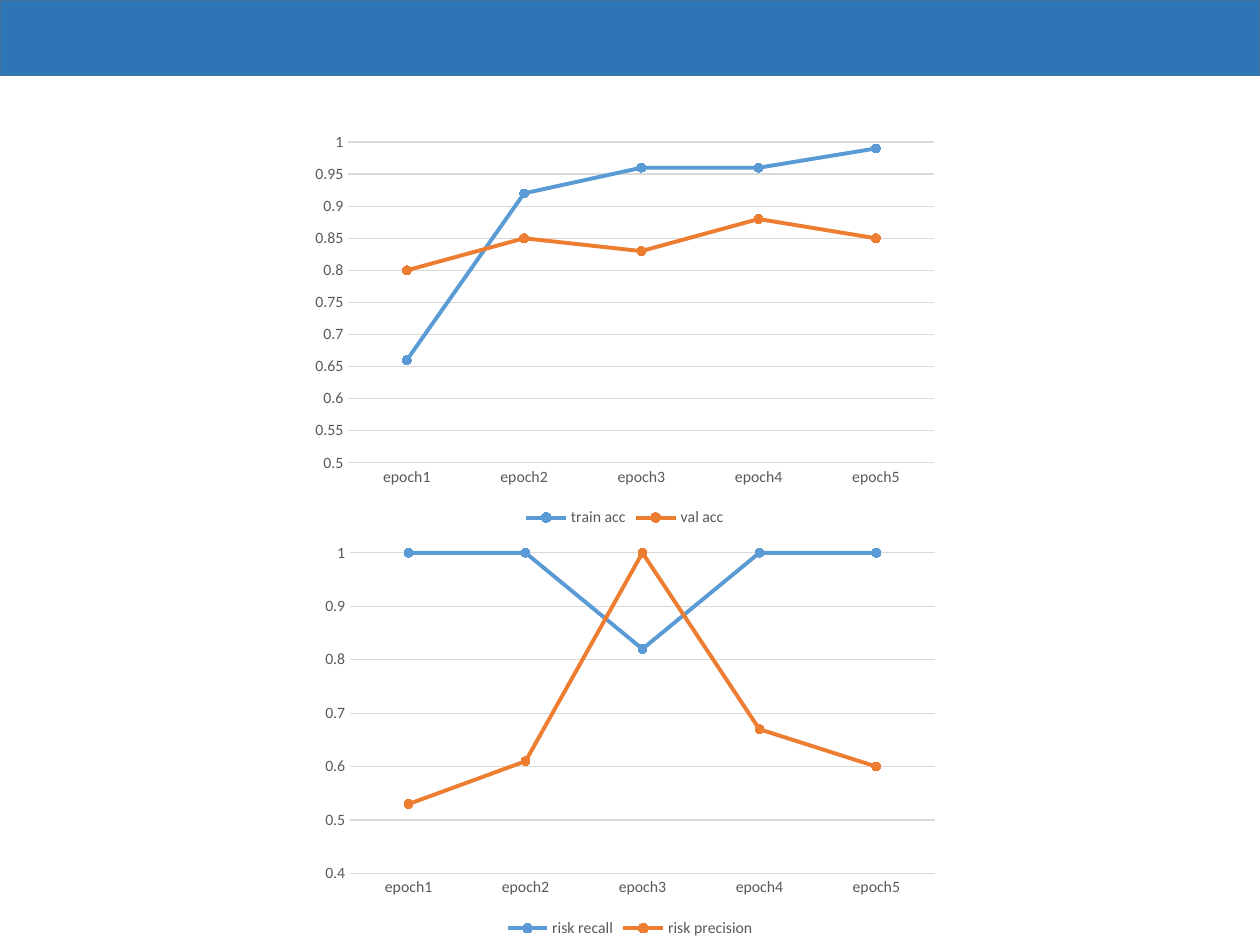
"""Build a slide with two line charts of training metrics per epoch."""
from pptx import Presentation
from pptx.chart.data import CategoryChartData
from pptx.dml.color import RGBColor
from pptx.enum.chart import XL_CHART_TYPE, XL_LEGEND_POSITION, XL_MARKER_STYLE, XL_TICK_MARK
from pptx.enum.shapes import MSO_SHAPE
from pptx.util import Pt

COLORS = {
    "banner": "2E75B6", "banner_line": "41719C", "grid": "D9D9D9",
    "label": "595959", "text": "000000", "first": "5B9BD5", "second": "ED7D31",
}
EPOCHS = ["epoch1", "epoch2", "epoch3", "epoch4", "epoch5"]
CHARTS = [
    {
        "left": 172.8, "top": 71.3, "min": 0.5, "step": 0.05,
        "series": [
            ("train acc", [0.66, 0.92, 0.96, 0.96, 0.99]),
            ("val acc", [0.8, 0.85, 0.83, 0.88, 0.85]),
        ],
    },
    {
        "left": 178.6, "top": 306, "min": 0.4, "step": 0.1,
        "series": [
            ("risk recall", [1, 1, 0.82, 1, 1]),
            ("risk precision", [0.53, 0.61, 1, 0.67, 0.6]),
        ],
    },
]
SLIDE_W, SLIDE_H = 720, 540
BANNER_H = 43.2
CHART_RIGHT, CHART_H = 541.4, 232.6


def rgb(name):
    return RGBColor.from_string(COLORS[name])


def set_attrs(obj, values):
    for name, value in values.items():
        setattr(obj, name, value)


def style_fill(fill, color):
    fill.solid()
    fill.fore_color.rgb = rgb(color)


def style_line(line, color, width):
    style_fill(line.fill, color)
    line.width = Pt(width)


def style_font(font, size, color):
    set_attrs(font, {"size": Pt(size), "name": "Calibri"})
    font.color.rgb = rgb(color)


def add_banner(slide):
    sp = slide.shapes.add_shape(MSO_SHAPE.RECTANGLE, 0, 0, Pt(SLIDE_W), Pt(BANNER_H))
    sp.shadow.inherit = False
    style_fill(sp.fill, "banner")
    style_line(sp.line, "banner_line", 1)


def add_line_chart(slide, item):
    data = CategoryChartData()
    data.categories = EPOCHS
    for name, values in item["series"]:
        data.add_series(name, values)
    width = CHART_RIGHT - item["left"]
    chart = slide.shapes.add_chart(
        XL_CHART_TYPE.LINE_MARKERS, Pt(item["left"]), Pt(item["top"]),
        Pt(width), Pt(CHART_H), data).chart
    set_attrs(chart, {"has_title": False, "has_legend": True})
    style_font(chart.font, 10, "text")
    set_attrs(chart.legend, {"position": XL_LEGEND_POSITION.BOTTOM, "include_in_layout": False})
    style_font(chart.legend.font, 9, "label")

    cat, val = chart.category_axis, chart.value_axis
    for axis in (cat, val):
        set_attrs(axis, {"major_tick_mark": XL_TICK_MARK.NONE, "minor_tick_mark": XL_TICK_MARK.NONE})
        style_font(axis.tick_labels.font, 9, "label")
    style_line(cat.format.line, "grid", 0.75)
    set_attrs(val, {
        "minimum_scale": item["min"], "maximum_scale": 1,
        "major_unit": item["step"], "has_major_gridlines": True,
    })
    val.format.line.fill.background()
    style_line(val.major_gridlines.format.line, "grid", 0.75)

    plot = chart.plots[0]
    plot.vary_by_categories = False
    for series, color in zip(plot.series, ("first", "second")):
        series.smooth = False
        style_line(series.format.line, color, 2.25)
        set_attrs(series.marker, {"style": XL_MARKER_STYLE.CIRCLE, "size": 5})
        style_fill(series.marker.format.fill, color)
        style_line(series.marker.format.line, color, 0.75)


def main():
    prs = Presentation()
    set_attrs(prs, {"slide_width": Pt(SLIDE_W), "slide_height": Pt(SLIDE_H)})
    s = prs.slides.add_slide(prs.slide_layouts[6])
    add_banner(s)
    for item in CHARTS:
        add_line_chart(s, item)
    prs.save("out.pptx")


if __name__ == "__main__":
    main()
